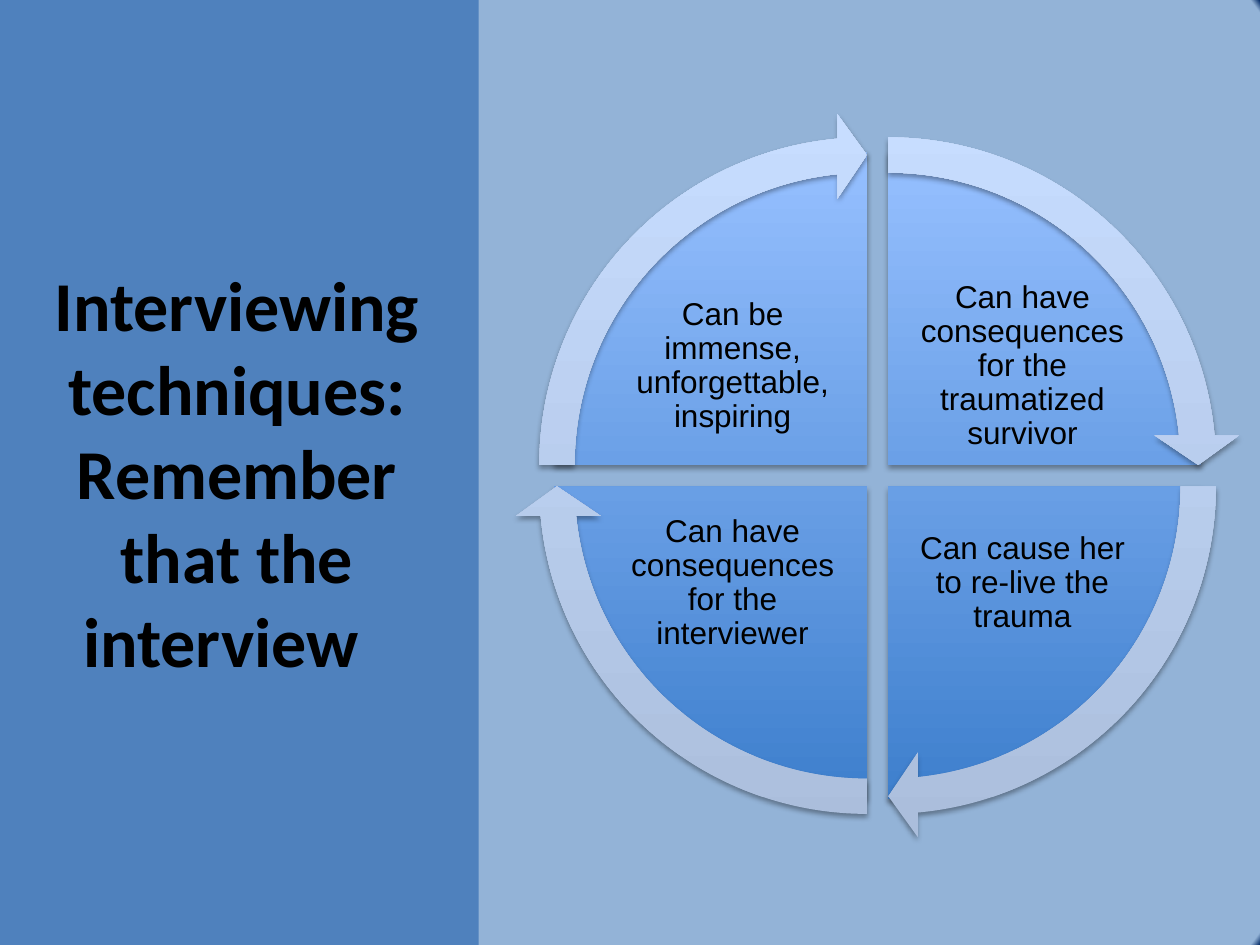
import pptx
import pptx.util
import pptx.oxml
import pptx.oxml.ns
import pptx.dml.color
import pptx.enum.shapes
import pptx.enum.text

Inches = pptx.util.Inches
Pt = pptx.util.Pt
MSO_SHAPE = pptx.enum.shapes.MSO_SHAPE
NS = pptx.oxml.ns.nsdecls("a")


def rgb(color):
    return pptx.dml.color.RGBColor.from_string(color)


def add_cycle_shape(kind, left, top, size, adjustments, bottom, top_color):
    """Add a square shape with a vertical gradient and a soft shadow."""
    sp = s.shapes.add_shape(kind, Inches(left), Inches(top), Inches(size), Inches(size))
    for i, value in enumerate(adjustments):
        sp.adjustments[i] = value
    sp.fill.gradient()
    sp.fill.gradient_angle = 90
    for stop, color, position in zip(sp.fill.gradient_stops, (bottom, top_color), (0, 1)):
        stop.color.rgb = rgb(color)
        stop.position = position
    sp.line.fill.background()
    sp.shadow.inherit = False
    effects = sp._element.spPr.find(pptx.oxml.ns.qn("a:effectLst"))
    effects.append(pptx.oxml.parse_xml(
        f'<a:outerShdw {NS} blurRad="{Pt(3.1)}" dist="{Pt(1.8)}" dir="5400000" rotWithShape="0">'
        '<a:srgbClr val="000000"><a:alpha val="35000"/></a:srgbClr></a:outerShdw>'))


def add_text(text, left, top, width, height, inset, font, size, bold, spacing):
    tb = s.shapes.add_textbox(Inches(left), Inches(top), Inches(width), Inches(height))
    tf = tb.text_frame
    tf.word_wrap = True
    tf.vertical_anchor = pptx.enum.text.MSO_ANCHOR.MIDDLE
    tf.margin_left = tf.margin_right = Inches(inset[0])
    tf.margin_top = tf.margin_bottom = Inches(inset[1])
    p = tf.paragraphs[0]
    p.alignment = pptx.enum.text.PP_ALIGN.CENTER
    p.line_spacing = spacing
    r = p.add_run()
    r.text = text
    r.font.name = font
    r.font.size = Pt(size)
    r.font.bold = bold
    r.font.color.rgb = rgb("000000")


prs = pptx.Presentation()
prs.slide_width = Inches(10)
prs.slide_height = Inches(7.5)
s = prs.slides.add_slide(prs.slide_layouts[6])

# Background: radial gradient that darkens only at the corners
s.background.fill.gradient()
grad = s._element.find(".//" + pptx.oxml.ns.qn("a:gradFill"))
stops = "".join(
    f'<a:gs pos="{pos * 1000}"><a:srgbClr val="{color}"/></a:gs>'
    for pos, color in ((0, "93B3D7"), (99, "93B3D7"), (100, "002763")))
grad.getparent().replace(grad, pptx.oxml.parse_xml(
    f'<a:gradFill {NS} rotWithShape="1"><a:gsLst>{stops}</a:gsLst><a:path path="circle">'
    '<a:fillToRect l="50000" t="50000" r="50000" b="50000"/></a:path></a:gradFill>'))

# Title panel
panel = s.shapes.add_shape(MSO_SHAPE.RECTANGLE, 0, 0, Inches(3.8), Inches(7.5))
panel.fill.solid()
panel.fill.fore_color.rgb = rgb("4F81BD")
panel.line.fill.background()
panel.shadow.inherit = False
add_text("Interviewing techniques: Remember that the interview  ",
         0.22, 0.7, 3.32, 6.09, (0.1, 0.05), "Calibri", 40, True, 1.0)

# Quadrants clockwise from top right: text, circle centre, text corner, start angle
# (angles are in units of 100000/60000 degree, so a quarter turn is 54)
QUARTER = 54
quadrants = [
    ("Can have consequences for the traumatized survivor", 7.05, 3.69, 7.2, 2.23, 162),
    ("Can cause her to re-live the trauma", 7.05, 3.86, 7.2, 3.95, 0),
    ("Can have consequences for the interviewer", 6.88, 3.86, 4.9, 3.95, 54),
    ("Can be immense, unforgettable, inspiring", 6.88, 3.69, 4.9, 2.23, 108),
]

# Pie slices with their labels
PIE = 4.97
for text, cx, cy, left, top, start in quadrants:
    end = (start + QUARTER) % 216
    add_cycle_shape(MSO_SHAPE.PIE, cx - PIE / 2, cy - PIE / 2, PIE,
                    (start, end), "3E7FCD", "96C0FF")
    add_text(text, left, top, 1.83, 1.36, (0.02, 0.02), "Arial", 18, False, 0.9)

# Curved arrows around the slices
RING = 5.59
HEAD = 3.28  # angle taken up by the arrowhead
for text, cx, cy, left, top, start in quadrants:
    add_cycle_shape(MSO_SHAPE.CIRCULAR_ARROW, cx - RING / 2, cy - RING / 2, RING,
                    (0.05, HEAD, start + QUARTER - HEAD, start, 0.06),
                    "ABBEDC", "C7DDFF")

prs.save("out.pptx")
